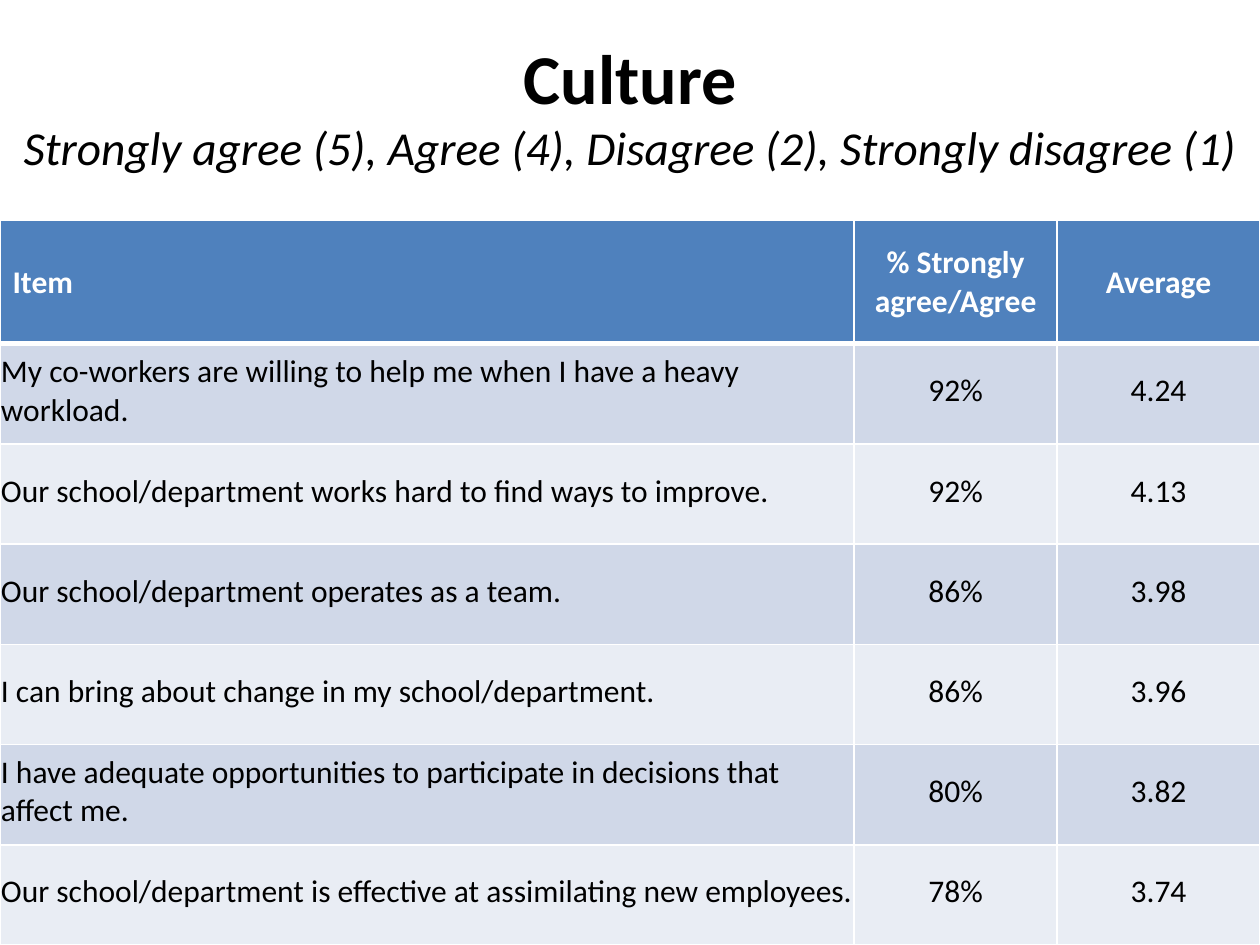
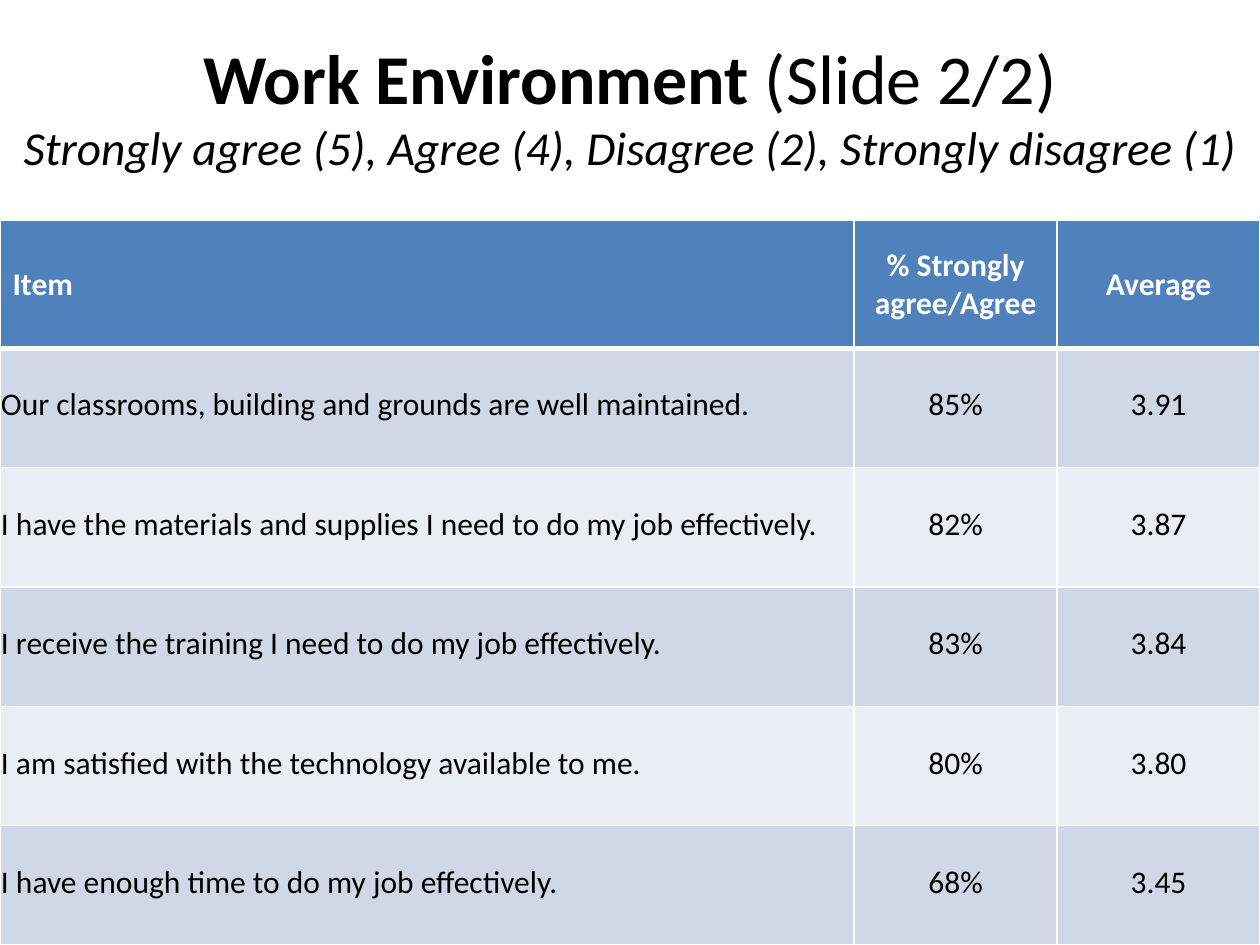
from dataclasses import dataclass

from lxml.etree import SubElement
from pptx import Presentation
from pptx.dml.color import RGBColor
from pptx.enum.text import MSO_ANCHOR as Anchor, MSO_AUTO_SIZE as AutoSize, PP_ALIGN as Align
from pptx.oxml.ns import qn
from pptx.util import Cm, Pt

# Shared look
COLORS = {
    "text": "000000",
    "white": "FFFFFF",
    "header": "4F81BD",
    "odd_row": "D0D8E8",
    "even_row": "E9EDF4",
}
FONT = "Calibri"
SCALE = "Strongly agree (5), Agree (4), Disagree (2), Strongly disagree (1)"
HEADINGS = ("Item", "% Strongly agree/Agree", "Average")

# Lengths in centimetres
PAGE_WIDTH, PAGE_HEIGHT = 25.4, 19.05
TITLE_HEIGHT = 4.23
TABLE_TOP = 4.45
TABLE_HEIGHT = PAGE_HEIGHT - TABLE_TOP
COLUMN_WIDTHS = (17.22, 4.09, 4.09)


@dataclass
class SurveyItem:
    statement: str
    agreement: str
    average: str


@dataclass
class SurveyPage:
    topic: str
    counter: str
    header_height: float
    items: list[SurveyItem]


PAGES = [
    SurveyPage("Culture", "", 2.48, [
        SurveyItem("My co-workers are willing to help me when I have a heavy workload.", "92%", "4.24"),
        SurveyItem("Our school/department works hard to find ways to improve.", "92%", "4.13"),
        SurveyItem("Our school/department operates as a team.", "86%", "3.98"),
        SurveyItem("I can bring about change in my school/department.", "86%", "3.96"),
        SurveyItem("I have adequate opportunities to participate in decisions that affect me.", "80%", "3.82"),
        SurveyItem("Our school/department is effective at assimilating new employees.", "78%", "3.74"),
    ]),
    SurveyPage("Work Environment ", "(Slide 2/2)", 2.57, [
        SurveyItem("Our classrooms, building and grounds are well maintained.", "85%", "3.91"),
        SurveyItem("I have the materials and supplies I need to do my job effectively.", "82%", "3.87"),
        SurveyItem("I receive the training I need to do my job effectively.", "83%", "3.84"),
        SurveyItem("I am satisfied with the technology available to me.", "80%", "3.80"),
        SurveyItem("I have enough time to do my job effectively.", "68%", "3.45"),
    ]),
]


def color(name: str) -> RGBColor:
    return RGBColor.from_string(COLORS[name])


def add_span(para, text: str, size: int, bold: bool = False, italic: bool = False) -> None:
    span = para.add_run()
    span.text = text
    span.font.size = Pt(size)
    span.font.bold = bold
    span.font.italic = italic


def write_title(page, survey: SurveyPage) -> None:
    title = page.shapes.title
    title.left, title.top = Cm(0), Cm(0)
    title.width, title.height = Cm(PAGE_WIDTH), Cm(TITLE_HEIGHT)
    frame = title.text_frame
    frame.word_wrap = True
    frame.auto_size = AutoSize.NONE
    frame.vertical_anchor = Anchor.MIDDLE
    para = frame.paragraphs[0]
    para.alignment = Align.CENTER
    para.font.name = FONT
    para.font.color.rgb = color("text")
    add_span(para, survey.topic, 40, bold=True)
    if survey.counter:
        add_span(para, survey.counter, 40)
    para.add_line_break()
    add_span(para, SCALE, 27, italic=True)


def add_borders(cell, top: int, bottom: int) -> None:
    properties = cell._tc.get_or_add_tcPr()
    for side, width in (("L", 1), ("R", 1), ("T", top), ("B", bottom)):
        line = SubElement(properties, qn(f"a:ln{side}"), w=str(Pt(width)))
        fill = SubElement(line, qn("a:solidFill"))
        SubElement(fill, qn("a:srgbClr"), val=COLORS["white"])


def format_cell(cell, text: str, row: int, column: int) -> None:
    is_header = row == 0
    # The line under the header is thicker than the rest
    add_borders(cell, top=3 if row == 1 else 1, bottom=3 if is_header else 1)
    cell.fill.solid()
    band = "header" if is_header else "odd_row" if row % 2 else "even_row"
    cell.fill.fore_color.rgb = color(band)
    cell.vertical_anchor = Anchor.MIDDLE
    if not is_header:
        cell.margin_left = cell.margin_right = cell.margin_top = Cm(0.02)
        cell.margin_bottom = Cm(0.13)
    cell.text = text
    para = cell.text_frame.paragraphs[0]
    para.alignment = Align.CENTER if column else Align.LEFT
    para.font.name = FONT
    para.font.size = Pt(18)
    para.font.bold = is_header
    para.font.color.rgb = color("white" if is_header else "text")


def add_survey_table(page, survey: SurveyPage) -> None:
    lines = [HEADINGS] + [(item.statement, item.agreement, item.average) for item in survey.items]
    table = page.shapes.add_table(
        len(lines), len(HEADINGS), Cm(0), Cm(TABLE_TOP), Cm(PAGE_WIDTH), Cm(TABLE_HEIGHT)
    ).table
    for column, width in zip(table.columns, COLUMN_WIDTHS):
        column.width = Cm(width)
    # Item rows share the height left under the header
    item_height = (TABLE_HEIGHT - survey.header_height) / len(survey.items)
    for row, texts in enumerate(lines):
        table.rows[row].height = Cm(item_height if row else survey.header_height)
        for column, text in enumerate(texts):
            format_cell(table.cell(row, column), text, row, column)


def main() -> None:
    deck = Presentation()
    deck.slide_width, deck.slide_height = Cm(PAGE_WIDTH), Cm(PAGE_HEIGHT)
    title_only = deck.slide_layouts[5]
    for survey in PAGES:
        page = deck.slides.add_slide(title_only)
        write_title(page, survey)
        add_survey_table(page, survey)
    deck.save("out.pptx")


if __name__ == "__main__":
    main()
